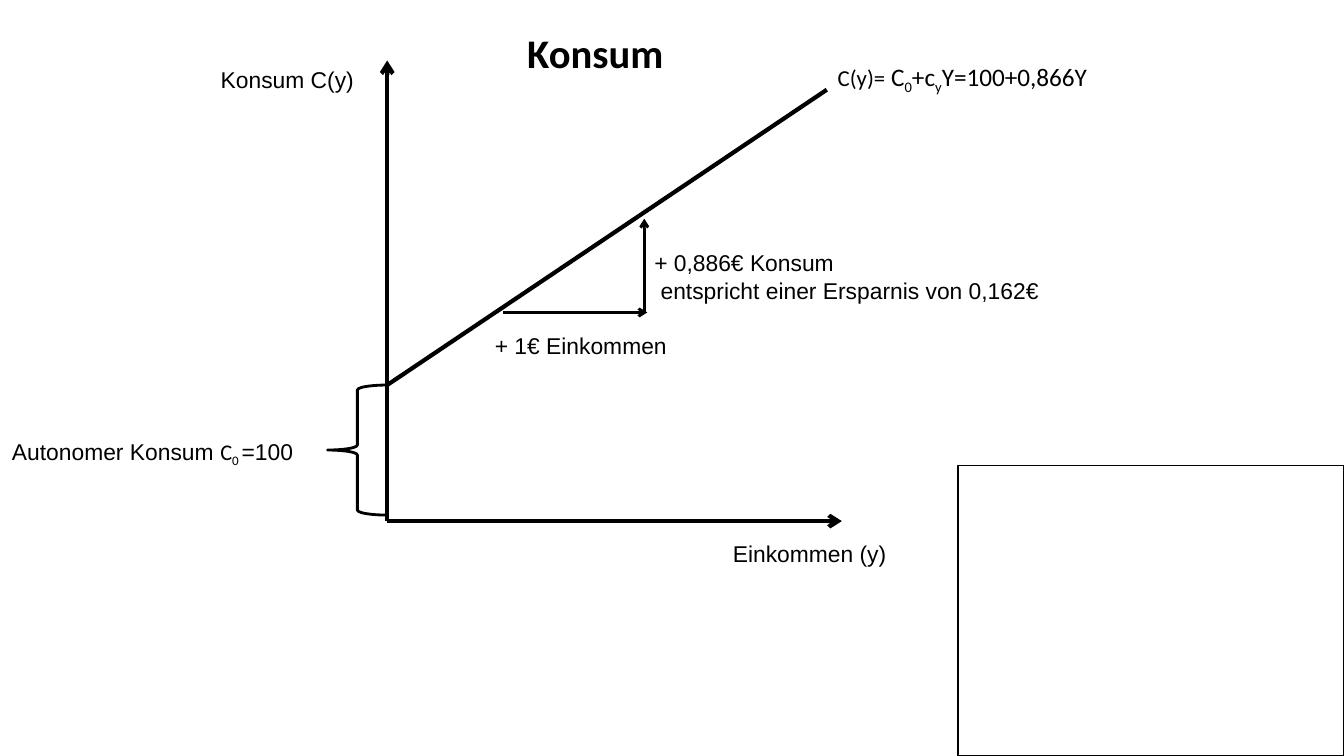
"""Builds the slide on the linear consumption function."""
from dataclasses import dataclass

import lxml.etree
import pptx
import pptx.dml.color
import pptx.enum.shapes
import pptx.enum.text
import pptx.oxml.ns
import pptx.slide
import pptx.util

SHAPES = pptx.enum.shapes.MSO_SHAPE
SLIDE_WIDTH = pptx.util.Inches(13.33)
SLIDE_HEIGHT = pptx.util.Inches(7.5)
COLUMNS = 100
ROWS = 100

AXIS_COLUMN = 28.81
BASE_ROW = 68.93
INTERCEPT_ROW = 50.93
STEP_COLUMN = 47.94
STEP_ROW = 41.33
LINE_ROWS = 5.07


@dataclass(frozen=True)
class Theme:
    ink: pptx.dml.color.RGBColor = pptx.dml.color.RGBColor(0, 0, 0)
    label_font: str = "Arial"
    formula_font: str = "Calibri"
    title_size: float = 29
    label_size: float = 16.3
    symbol_size: float = 16
    formula_size: float = 18
    axis_weight: float = 3
    step_weight: float = 2
    frame_weight: float = 1


THEME = Theme()


@dataclass(frozen=True)
class Run:
    text: str
    size: float = THEME.label_size
    font: str = THEME.label_font
    bold: bool = False
    subscript: bool = False


@dataclass(frozen=True)
class Label:
    column: float
    row: float
    columns: float
    rows: float
    lines: tuple[tuple[Run, ...], ...]
    wrap: bool = False


@dataclass(frozen=True)
class Line:
    start: tuple[float, float]
    end: tuple[float, float]
    weight: float
    arrow: bool = True


@dataclass(frozen=True)
class Outline:
    kind: pptx.enum.shapes.MSO_SHAPE
    column: float
    row: float
    columns: float
    rows: float
    weight: float
    mirrored: bool = False


def formula(text: str, subscript: bool = False) -> Run:
    return Run(text, THEME.formula_size, THEME.formula_font, subscript=subscript)


def symbol(text: str, subscript: bool = False) -> Run:
    return Run(text, THEME.symbol_size, THEME.formula_font, subscript=subscript)


TITLE = Label(13.13, 1.47, 62.34, 10.8,
              ((Run("Konsum", THEME.title_size, THEME.formula_font, bold=True),),), True)

LINES = (
    Line((AXIS_COLUMN, BASE_ROW), (62.64, BASE_ROW), THEME.axis_weight),
    Line((AXIS_COLUMN, BASE_ROW), (AXIS_COLUMN, 8), THEME.axis_weight),
    Line((AXIS_COLUMN, INTERCEPT_ROW), (61.52, 11.87), THEME.axis_weight, arrow=False),
    Line((37.43, STEP_ROW), (48.16, STEP_ROW), THEME.step_weight),
    Line((STEP_COLUMN, STEP_ROW), (STEP_COLUMN, 28.93), THEME.step_weight),
)

OUTLINES = (
    Outline(SHAPES.RIGHT_BRACE, 24.38, INTERCEPT_ROW, AXIS_COLUMN - 24.38, 17.2,
            THEME.step_weight, mirrored=True),
    Outline(SHAPES.RECTANGLE, 71.27, 61.6, COLUMNS - 71.27, ROWS - 61.6, THEME.frame_weight),
)

LABELS = (
    Label(0.15, 57.2, 22.81, LINE_ROWS,
          ((Run("Autonomer Konsum "), symbol("C"), symbol("0 ", True), Run("=100")),)),
    Label(53.79, 70.8, 13.05, LINE_ROWS, ((Run("Einkommen (y)"),),)),
    Label(15.68, 8, 12.3, LINE_ROWS, ((Run("Konsum C(y)"),),), True),
    Label(STEP_COLUMN, 32.27, 30.53, 8.67,
          ((Run("+ 0,886€ Konsum"),), (Run(" entspricht einer Ersparnis von 0,162€"),))),
    Label(36.08, 43.2, 18.98, LINE_ROWS, ((Run("+ 1€ Einkommen"),),), True),
    Label(61.59, 7.47, 20.48, 5.33,
          ((Run("C(y)=", font=THEME.formula_font), formula(" C"), formula("0", True),
            formula("+c"), formula("y", True), formula("Y=100+0,866Y")),)),
)


def across(columns: float) -> int:
    return round(SLIDE_WIDTH * columns / COLUMNS)


def down(rows: float) -> int:
    return round(SLIDE_HEIGHT * rows / ROWS)


def draw_label(slide: pptx.slide.Slide, label: Label, title: bool = False) -> None:
    shape = slide.shapes.add_textbox(across(label.column), down(label.row),
                                     across(label.columns), down(label.rows))
    frame = shape.text_frame
    frame.word_wrap = label.wrap
    paragraph = frame.paragraphs[0]
    if title:
        frame.vertical_anchor = pptx.enum.text.MSO_ANCHOR.MIDDLE
        paragraph.alignment = pptx.enum.text.PP_ALIGN.CENTER
    else:
        frame.auto_size = pptx.enum.text.MSO_AUTO_SIZE.SHAPE_TO_FIT_TEXT
    for index, line in enumerate(label.lines):
        if index:
            paragraph.add_line_break()
        for item in line:
            run = paragraph.add_run()
            run.text = item.text
            run.font.name = item.font
            run.font.size = pptx.util.Pt(item.size)
            run.font.bold = item.bold
            run.font.color.rgb = THEME.ink
            if item.subscript:
                run.font._element.set("baseline", "-25000")


def draw_line(slide: pptx.slide.Slide, line: Line) -> None:
    connector = slide.shapes.add_connector(
        pptx.enum.shapes.MSO_CONNECTOR.STRAIGHT,
        across(line.start[0]), down(line.start[1]), across(line.end[0]), down(line.end[1]))
    connector.line.color.rgb = THEME.ink
    connector.line.width = pptx.util.Pt(line.weight)
    if line.arrow:
        tail = lxml.etree.SubElement(connector.line._get_or_add_ln(),
                                     pptx.oxml.ns.qn("a:tailEnd"))
        tail.set("type", "arrow")
    lxml.etree.SubElement(connector._element.spPr, pptx.oxml.ns.qn("a:effectLst"))


def draw_outline(slide: pptx.slide.Slide, outline: Outline) -> None:
    shape = slide.shapes.add_shape(outline.kind, across(outline.column), down(outline.row),
                                   across(outline.columns), down(outline.rows))
    shape.shadow.inherit = False
    shape.fill.background()
    shape.line.color.rgb = THEME.ink
    shape.line.width = pptx.util.Pt(outline.weight)
    if outline.mirrored:
        shape._element.spPr.find(pptx.oxml.ns.qn("a:xfrm")).set("flipH", "1")


def main() -> None:
    presentation = pptx.Presentation()
    presentation.slide_width = SLIDE_WIDTH
    presentation.slide_height = SLIDE_HEIGHT
    slide = presentation.slides.add_slide(presentation.slide_layouts[6])
    draw_label(slide, TITLE, title=True)
    for line in LINES:
        draw_line(slide, line)
    for outline in OUTLINES:
        draw_outline(slide, outline)
    for label in LABELS:
        draw_label(slide, label)
    presentation.save("out.pptx")


if __name__ == "__main__":
    main()
